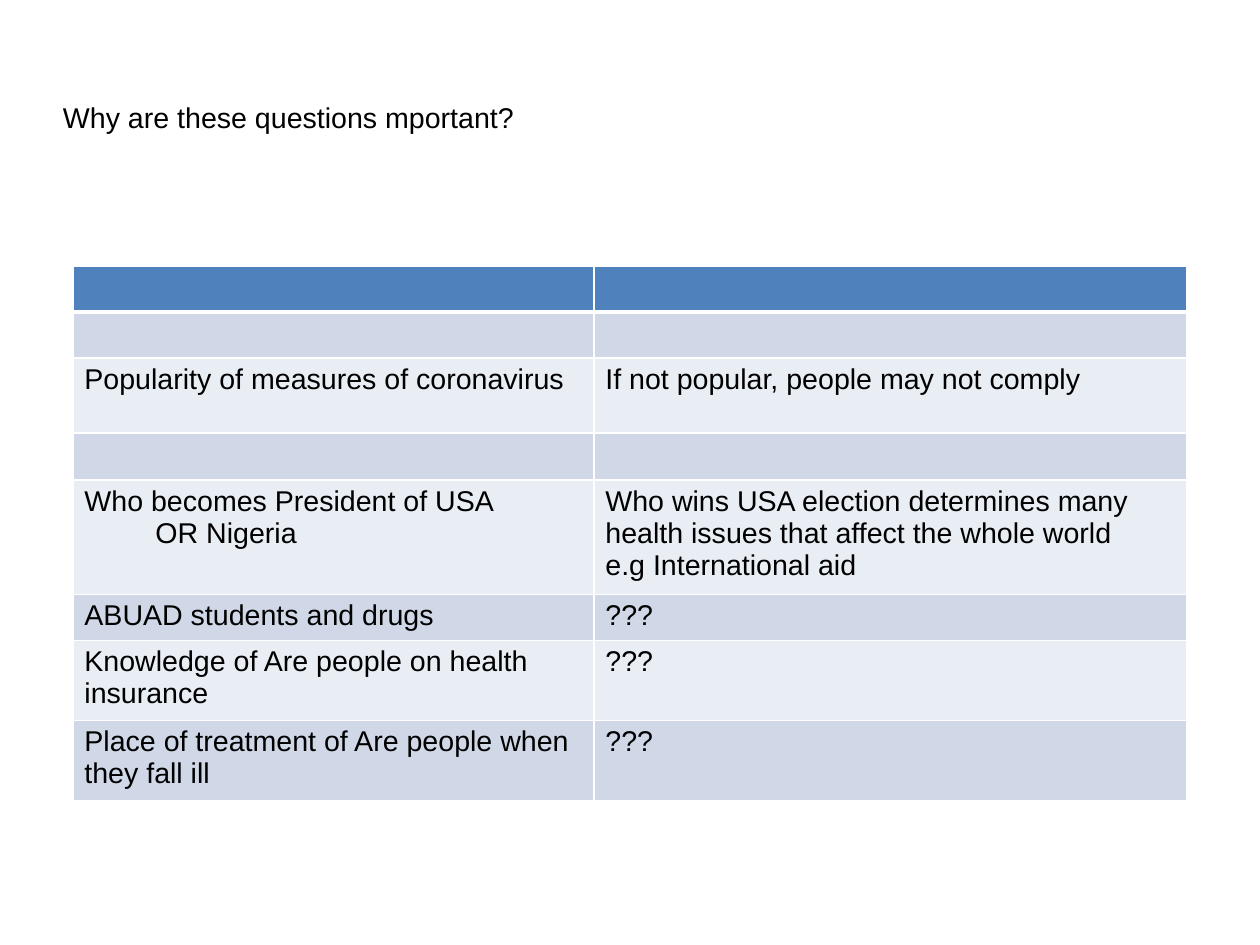
from dataclasses import dataclass

from lxml.etree import SubElement
from pptx import Presentation
from pptx.dml.color import RGBColor
from pptx.enum.text import MSO_VERTICAL_ANCHOR as Anchor
from pptx.oxml.ns import qn
from pptx.slide import Slide
from pptx.table import _Cell as Cell
from pptx.text.text import TextFrame
from pptx.util import Pt

EMU_PER_PX = 8000


@dataclass(frozen=True)
class Theme:
    font: str = "Arial"
    text_size: int = 18
    text: str = "000000"
    header: str = "4F81BD"
    bands: tuple[str, str] = ("D0D8E8", "E9EDF4")
    border: str = "FFFFFF"
    thin_line: int = 1
    thick_line: int = 3


@dataclass(frozen=True)
class Row:
    height: int
    question: str = ""
    importance: str = ""
    second_line_indent: int = 0


THEME = Theme()
COLUMN_WIDTHS = (521, 593)
ROWS = (
    Row(46),
    Row(46),
    Row(75, "Popularity of measures of coronavirus", "If not popular, people may not comply"),
    Row(47),
    Row(
        107,
        "Who becomes President of USA\nOR Nigeria",
        "Who wins USA election determines many health issues that affect the whole world\n"
        "e.g International aid",
        second_line_indent=71,
    ),
    Row(46, "ABUAD students and drugs", "???"),
    Row(76, "Knowledge of Are people on health insurance", "???"),
    Row(75, "Place of treatment of Are people when they fall ill", "???"),
)


def px(length: int) -> int:
    return length * EMU_PER_PX


def write_text(frame: TextFrame, text: str) -> None:
    frame.text = text
    for paragraph in frame.paragraphs:
        for run in paragraph.runs:
            run.font.name = THEME.font
            run.font.size = Pt(THEME.text_size)
            run.font.color.rgb = RGBColor.from_string(THEME.text)


def add_title(slide: Slide, text: str) -> None:
    frame = slide.shapes.add_textbox(px(63), px(72), px(900), px(90)).text_frame
    frame.word_wrap = True
    frame.vertical_anchor = Anchor.MIDDLE
    frame.margin_left = frame.margin_right = frame.margin_top = frame.margin_bottom = 0
    write_text(frame, text)


def style_cell(cell: Cell, row_index: int) -> None:
    """Draw the four borders, then the header or band fill."""
    properties = cell._tc.get_or_add_tcPr()
    thick_side = {0: "lnB", 1: "lnT"}.get(row_index)
    for side in ("lnL", "lnR", "lnT", "lnB"):
        width = THEME.thick_line if side == thick_side else THEME.thin_line
        line = SubElement(properties, qn(f"a:{side}"), w=str(Pt(width)))
        SubElement(SubElement(line, qn("a:solidFill")), qn("a:srgbClr"), val=THEME.border)
    color = THEME.bands[(row_index - 1) % 2] if row_index else THEME.header
    cell.fill.solid()
    cell.fill.fore_color.rgb = RGBColor.from_string(color)


def add_question_table(slide: Slide) -> None:
    height = sum(row.height for row in ROWS)
    table = slide.shapes.add_table(
        len(ROWS), len(COLUMN_WIDTHS), px(73), px(266), px(sum(COLUMN_WIDTHS)), px(height)
    ).table
    table.first_row = table.horz_banding = False
    for column, width in zip(table.columns, COLUMN_WIDTHS):
        column.width = px(width)
    for row_index, row in enumerate(ROWS):
        table.rows[row_index].height = px(row.height)
        for column_index, text in enumerate((row.question, row.importance)):
            cell = table.cell(row_index, column_index)
            style_cell(cell, row_index)
            if text:
                write_text(cell.text_frame, text)
        if row.second_line_indent:
            second_line = table.cell(row_index, 0).text_frame.paragraphs[1]
            second_line._p.get_or_add_pPr().set("marL", str(px(row.second_line_indent)))


def main() -> None:
    presentation = Presentation()
    presentation.slide_width, presentation.slide_height = px(1260), px(945)
    slide = presentation.slides.add_slide(presentation.slide_layouts[6])
    add_title(slide, "Why are these questions mportant?")
    add_question_table(slide)
    presentation.save("out.pptx")


if __name__ == "__main__":
    main()
